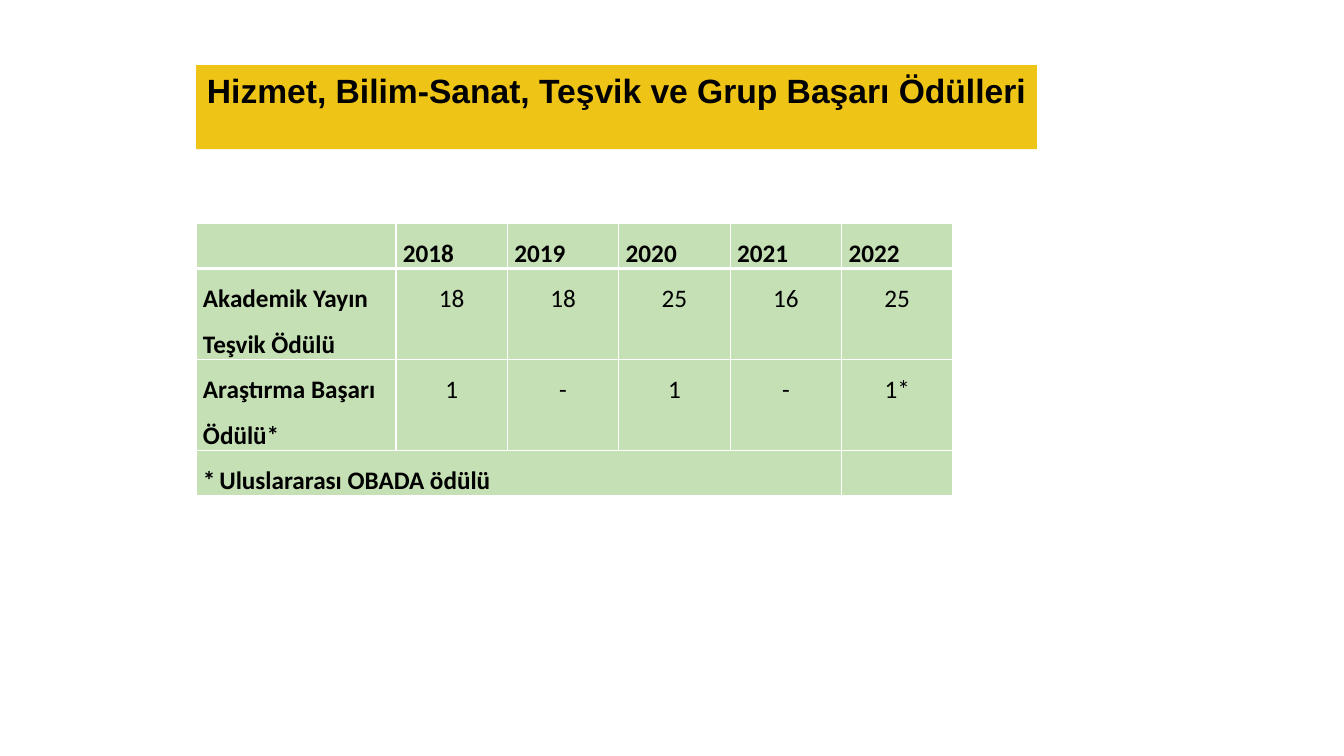
from dataclasses import dataclass

from lxml import etree
from pptx import Presentation
from pptx import util as u
from pptx.dml.color import RGBColor
from pptx.enum import text
from pptx.oxml.ns import qn


@dataclass(frozen=True)
class Theme:
    gold: str = "EEC416"
    green: str = "C5E0B4"
    white: str = "FFFFFF"
    black: str = "000000"
    title_font: str = "Arial"
    table_font: str = "Calibri"
    title_size: int = 24
    table_size: int = 18
    gap_size: int = 12
    thin: int = 1
    thick: int = 3


THEME = Theme()
PX_PER_INCH = 100.8
LEFT = 196

TITLE = "Hizmet, Bilim-Sanat, Teşvik ve Grup Başarı Ödülleri"
YEARS = ["2018", "2019", "2020", "2021", "2022"]
AWARDS = [
    ["Akademik Yayın Teşvik Ödülü", "18", "18", "25", "16", "25"],
    ["Araştırma Başarı Ödülü*", "1", "-", "1", "-", "1*"],
]
NOTE = ["*", " ", "Uluslararası OBADA ödülü"]
LABEL_W, YEARS_W = 200, 557
ROW_HEIGHTS = [45, 91, 91, 45]


def px(n):
    return u.Emu(round(n * 914400 / PX_PER_INCH))


def rgb(color):
    return RGBColor.from_string(color)


def style_font(p, name, size, bold):
    p.font.name = name
    p.font.size = u.Pt(size)
    p.font.bold = bold
    p.font.color.rgb = rgb(THEME.black)


def add_title(s):
    sp = s.shapes.title
    sp.left, sp.top, sp.width, sp.height = px(LEFT), px(65), px(841), px(50)
    sp.fill.solid()
    sp.fill.fore_color.rgb = rgb(THEME.gold)
    tf = sp.text_frame
    tf.text = TITLE
    tf.word_wrap = True
    tf.auto_size = text.MSO_AUTO_SIZE.SHAPE_TO_FIT_TEXT
    tf.vertical_anchor = text.MSO_ANCHOR.TOP
    p = tf.paragraphs[0]
    p.alignment = text.PP_ALIGN.CENTER
    style_font(p, THEME.title_font, THEME.title_size, True)


def set_borders(cell, top, bottom):
    tc_pr = cell._tc.get_or_add_tcPr()
    widths = {"lnL": THEME.thin, "lnR": THEME.thin, "lnT": top, "lnB": bottom}
    for side, width in widths.items():
        ln = etree.SubElement(tc_pr, qn(f"a:{side}"), w=str(u.Pt(width)))
        fill = etree.SubElement(ln, qn("a:solidFill"))
        etree.SubElement(fill, qn("a:srgbClr"), val=THEME.white)


def format_cell(cell, row, col):
    set_borders(cell,
                top=THEME.thick if row == 1 else THEME.thin,
                bottom=THEME.thick if row == 0 else THEME.thin)
    cell.fill.solid()
    cell.fill.fore_color.rgb = rgb(THEME.green)
    cell.margin_left = cell.margin_right = px(7)
    cell.margin_top = cell.margin_bottom = 0
    is_value = 0 < row <= len(AWARDS) and col > 0
    p = cell.text_frame.paragraphs[0]
    p.alignment = text.PP_ALIGN.CENTER if is_value else text.PP_ALIGN.LEFT
    p.line_spacing = 1.5
    style_font(p, THEME.table_font, THEME.table_size, not is_value)


def add_note(cell):
    p = cell.text_frame.paragraphs[0]
    for part in NOTE:
        r = p.add_run()
        r.text = part
        if part == " ":
            r.font.size = u.Pt(THEME.gap_size)


def add_awards_table(s):
    rows = [[""] + YEARS, *AWARDS, [""] * (len(YEARS) + 1)]
    frame = s.shapes.add_table(len(rows), len(rows[0]), px(LEFT), px(223),
                               px(LABEL_W + YEARS_W), px(sum(ROW_HEIGHTS)))
    table = frame.table
    table.first_row = table.horz_banding = False
    for i, column in enumerate(table.columns):
        column.width = px(YEARS_W / len(YEARS) if i else LABEL_W)
    for row, height in zip(table.rows, ROW_HEIGHTS):
        row.height = px(height)

    # Cell text and formatting
    for i, values in enumerate(rows):
        for j, value in enumerate(values):
            cell = table.cell(i, j)
            if value:
                cell.text = value
            format_cell(cell, i, j)

    # Footnote across all columns but the last
    last = len(rows) - 1
    table.cell(last, 0).merge(table.cell(last, len(YEARS) - 1))
    add_note(table.cell(last, 0))


def main():
    prs = Presentation()
    prs.slide_width, prs.slide_height = px(1344), px(756)
    s = prs.slides.add_slide(prs.slide_layouts[5])
    add_title(s)
    add_awards_table(s)
    prs.save("out.pptx")


if __name__ == "__main__":
    main()
